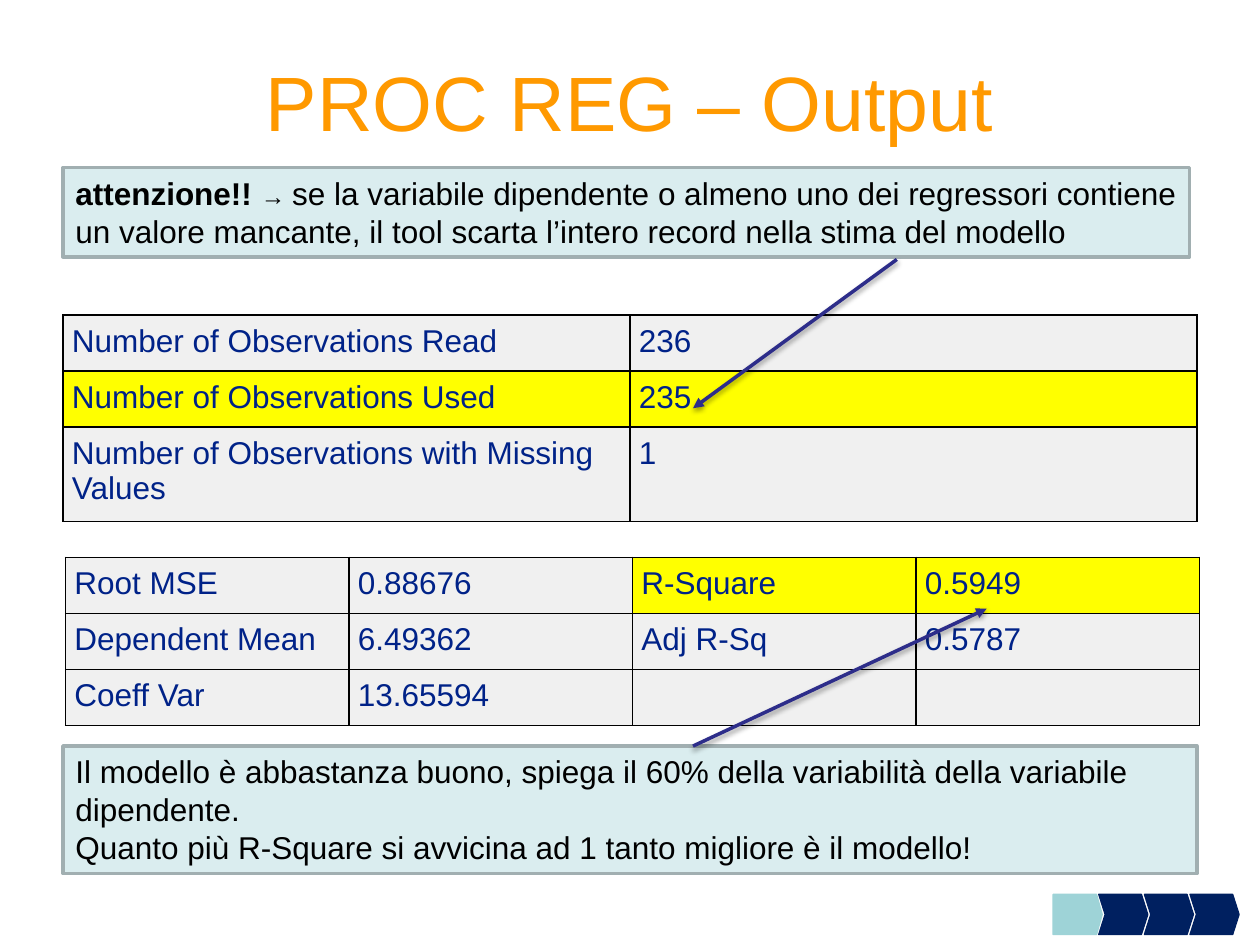
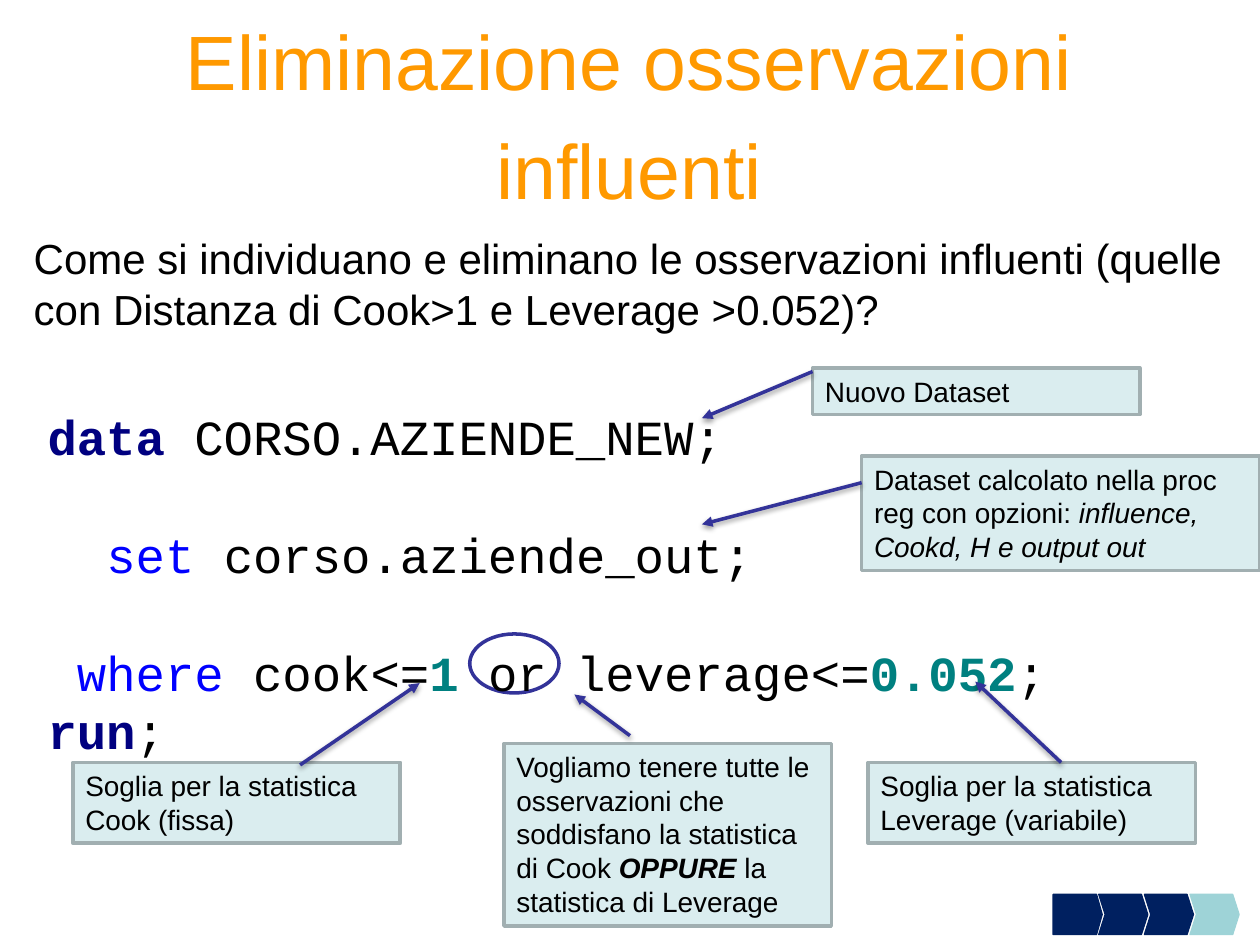
from dataclasses import dataclass

from lxml.etree import SubElement
from pptx import Presentation
from pptx.dml.color import RGBColor
from pptx.enum.shapes import MSO_CONNECTOR, MSO_SHAPE
from pptx.enum.text import MSO_ANCHOR, PP_ALIGN
from pptx.oxml import parse_xml
from pptx.oxml.ns import nsdecls, qn
from pptx.util import Cm, Pt


@dataclass(frozen=True)
class Theme:
    sans: str = "Arial"
    mono: str = "Courier New"
    title_pt: int = 44
    question_pt: int = 24
    note_pt: int = 18
    callout_pt: int = 16
    arrow_sign_pt: int = 14
    code_pt: int = 28
    leading: float = 1.2
    title_color: str = "FF9900"
    ink: str = "000000"
    white: str = "FFFFFF"
    note_fill: str = "DAEDEF"
    note_line: str = "A1AFB1"
    cell_text: str = "002288"
    cell_fill: str = "F0F0F0"
    highlight: str = "FFFF00"
    arrow: str = "2D2D8A"
    arrow_alt: str = "333399"
    step: str = "002060"
    step_active: str = "9ED3D7"
    keyword: str = "000080"
    statement: str = "0000FF"
    number: str = "008080"


@dataclass(frozen=True)
class Box:
    left: float
    top: float
    width: float
    height: float

    def lengths(self):
        return Cm(self.left), Cm(self.top), Cm(self.width), Cm(self.height)


THEME = Theme()


def rgb(color):
    return RGBColor.from_string(color)


# Text helpers
def add_run(paragraph, text, size, color=THEME.ink, font=THEME.sans, bold=False, italic=False):
    run = paragraph.add_run()
    run.text = text
    run.font.size = Pt(size)
    run.font.name = font
    run.font.bold = bold
    run.font.italic = italic
    run.font.color.rgb = rgb(color)


def set_leading(paragraph, size, factor=THEME.leading):
    paragraph.line_spacing = Pt(round(size * factor, 1))


def paint(shape, fill, line, width):
    shape.shadow.inherit = False
    shape.fill.solid()
    shape.fill.fore_color.rgb = rgb(fill)
    shape.line.color.rgb = rgb(line)
    shape.line.width = Pt(width)


# Shared parts
def add_title(slide, box, text, anchor=MSO_ANCHOR.MIDDLE, leading=THEME.leading):
    title = slide.shapes.title
    title.left, title.top, title.width, title.height = box.lengths()
    frame = title.text_frame
    frame.word_wrap = True
    frame.vertical_anchor = anchor
    paragraph = frame.paragraphs[0]
    paragraph.alignment = PP_ALIGN.CENTER
    set_leading(paragraph, THEME.title_pt, leading)
    add_run(paragraph, text, THEME.title_pt, THEME.title_color)


def add_note(slide, box, size, lines):
    """Tinted box; each line is a list of (text, run options)."""
    note = slide.shapes.add_shape(MSO_SHAPE.RECTANGLE, *box.lengths())
    paint(note, THEME.note_fill, THEME.note_line, 2)
    note.text_frame.word_wrap = True
    note.text_frame.vertical_anchor = MSO_ANCHOR.TOP
    paragraph = note.text_frame.paragraphs[0]
    paragraph.alignment = PP_ALIGN.LEFT
    set_leading(paragraph, size)
    for number, line in enumerate(lines):
        if number:
            paragraph.add_line_break()
        for text, options in line:
            add_run(paragraph, text, **{"size": size, **options})


def add_arrow(slide, start, end, color):
    arrow = slide.shapes.add_connector(
        MSO_CONNECTOR.STRAIGHT, *(Cm(value) for value in (*start, *end)))
    arrow.line.color.rgb = rgb(color)
    arrow.line.width = Pt(2)
    properties = arrow._element.spPr
    SubElement(properties.find(qn("a:ln")), qn("a:tailEnd"), type="triangle")
    properties.append(parse_xml(
        f'<a:effectLst {nsdecls("a")}><a:outerShdw blurRad="{Pt(3.1)}" dist="{Pt(1.6)}" '
        'dir="5400000" rotWithShape="0"><a:srgbClr val="000000"><a:alpha val="38000"/>'
        '</a:srgbClr></a:outerShdw></a:effectLst>'))


def add_progress(slide, box, active):
    pitch = 0.92
    for step in range(4):
        kind = MSO_SHAPE.CHEVRON if step else MSO_SHAPE.PENTAGON
        place = Box(box.left + step * pitch, box.top, box.width - 3 * pitch, box.height)
        marker = slide.shapes.add_shape(kind, *place.lengths())
        marker.adjustments[0] = 0.16 if step else 0.14
        color = THEME.step_active if step == active else THEME.step
        paint(marker, color, color, 0.75)


# Output tables
def border_cell(cell):
    properties = cell._tc.get_or_add_tcPr()
    for index, side in enumerate(("lnL", "lnR", "lnT", "lnB")):
        properties.insert(index, parse_xml(
            f'<a:{side} {nsdecls("a")} w="{Pt(0.75)}"><a:solidFill>'
            f'<a:srgbClr val="{THEME.ink}"/></a:solidFill></a:{side}>'))


def add_output_table(slide, box, rows, row_heights, highlighted):
    table = slide.shapes.add_table(len(rows), len(rows[0]), *box.lengths()).table
    table.first_row = table.horz_banding = False
    for column in table.columns:
        column.width = Cm(box.width / len(rows[0]))
    for r, (values, height) in enumerate(zip(rows, row_heights)):
        table.rows[r].height = Cm(height)
        for c, value in enumerate(values):
            cell = table.cell(r, c)
            cell.margin_left = cell.margin_right = Cm(0.18)
            cell.margin_top = cell.margin_bottom = Cm(0.18)
            cell.fill.solid()
            cell.fill.fore_color.rgb = rgb(
                THEME.highlight if (r, c) in highlighted else THEME.cell_fill)
            border_cell(cell)
            if value:
                add_run(cell.text_frame.paragraphs[0], value, THEME.note_pt, THEME.cell_text)


# Question and program code
def add_text_area(slide, box):
    frame = slide.shapes.add_textbox(*box.lengths()).text_frame
    frame.word_wrap = True
    return frame


def add_question(slide, box, text):
    paragraph = add_text_area(slide, box).paragraphs[0]
    set_leading(paragraph, THEME.question_pt)
    add_run(paragraph, text, THEME.question_pt)


def add_code(slide, box, statements):
    """Each statement is (indent in characters, gap above in lines, runs)."""
    frame = add_text_area(slide, box)
    for number, (indent, gap, runs) in enumerate(statements):
        paragraph = frame.add_paragraph() if number else frame.paragraphs[0]
        set_leading(paragraph, THEME.code_pt)
        paragraph.space_before = Pt(gap * THEME.code_pt * THEME.leading)
        properties = paragraph._p.get_or_add_pPr()
        properties.set("marL", str(Pt(indent * THEME.code_pt * 0.6)))
        properties.set("indent", "0")
        for text, color, bold in runs:
            add_run(paragraph, text, THEME.code_pt, color, THEME.mono, bold)


def add_or_ring(slide, box):
    ring = slide.shapes.add_shape(MSO_SHAPE.OVAL, *box.lengths())
    paint(ring, THEME.white, THEME.arrow_alt, 2)


# Slides
def build_output_slide(slide, progress_box):
    add_title(slide, Box(1.27, 0.43, 22.86, 3.18), "PROC REG – Output")
    add_note(slide, Box(1.27, 3.38, 22.71, 1.8), THEME.note_pt, [[
        ("attenzione!! ", {"bold": True}),
        ("→ ", {"size": THEME.arrow_sign_pt}),
        ("se la variabile dipendente o almeno uno dei regressori contiene un valore "
         "mancante, il tool scarta l’intero record nella stima del modello", {}),
    ]])
    add_note(slide, Box(1.27, 15.04, 22.86, 2.57), THEME.note_pt, [
        [("Il modello è abbastanza buono, spiega il 60% della variabilità della "
          "variabile dipendente.", {})],
        [("Quanto più R-Square si avvicina ad 1 tanto migliore è il modello!", {})],
    ])
    add_output_table(slide, Box(1.27, 6.35, 22.86, 4.16), [
        ("Number of Observations Read", "236"),
        ("Number of Observations Used", "235"),
        ("Number of Observations with Missing Values", "1"),
    ], (1.13, 1.13, 1.9), {(1, 0), (1, 1)})
    add_arrow(slide, (18.08, 5.23), (13.97, 8.23), THEME.arrow)
    add_output_table(slide, Box(1.32, 11.23, 22.86, 3.39), [
        ("Root MSE", "0.88676", "R-Square", "0.5949"),
        ("Dependent Mean", "6.49362", "Adj R-Sq", "0.5787"),
        ("Coeff Var", "13.65594", "", ""),
    ], (1.13, 1.13, 1.13), {(0, 2), (0, 3)})
    add_arrow(slide, (13.97, 15.04), (19.89, 12.27), THEME.arrow)
    add_progress(slide, progress_box, active=0)


def build_selection_slide(slide, progress_box):
    add_or_ring(slide, Box(9.47, 12.78, 1.8, 1.19))
    add_code(slide, Box(0.71, 8.08, 20.98, 7.3), [
        (0, 0, [("data", THEME.keyword, True), (" CORSO.AZIENDE_NEW;", THEME.ink, False)]),
        (2, 1, [("set ", THEME.statement, False), ("corso.aziende_out;", THEME.ink, False)]),
        (1, 1, [("where", THEME.statement, False), (" cook<=", THEME.ink, False),
                ("1 ", THEME.number, True), ("or leverage<=", THEME.ink, False),
                ("0.052", THEME.number, True), (";", THEME.ink, False)]),
        (0, 0, [("run", THEME.keyword, True), (";", THEME.ink, False)]),
    ])
    add_title(slide, Box(1.47, -0.2, 22.43, 4.78), "Eliminazione osservazioni influenti",
              MSO_ANCHOR.TOP, leading=1.42)
    add_question(slide, Box(0.43, 4.57, 24.56, 2.5),
                 "Come si individuano e eliminano le osservazioni influenti "
                 "(quelle con Distanza di Cook>1 e Leverage >0.052)?")
    add_progress(slide, progress_box, active=3)

    # Callouts: box, arrow start, arrow end, text
    callouts = [
        (Box(16.38, 7.42, 6.6, 0.94), (16.38, 7.49), (14.15, 8.43), [("Nuovo Dataset", {})]),
        (Box(17.37, 9.19, 8.03, 2.31), (17.37, 9.73), (14.15, 10.57),
         [("Dataset calcolato nella proc reg con opzioni: ", {}),
          ("influence, Cookd, H e output out", {"italic": True})]),
        (Box(1.47, 15.37, 6.6, 1.63), (6.05, 15.42), (8.46, 13.77),
         [("Soglia per la statistica Cook (fissa)", {})]),
        (Box(17.5, 15.37, 6.6, 1.63), (21.39, 15.37), (19.66, 13.74),
         [("Soglia per la statistica Leverage (variabile)", {})]),
        (Box(10.16, 14.99, 6.6, 3.68), (12.7, 14.83), (11.58, 14),
         [("Vogliamo tenere tutte le osservazioni che soddisfano la statistica di Cook ", {}),
          ("OPPURE", {"bold": True, "italic": True}),
          (" la statistica di Leverage", {})]),
    ]
    for box, start, end, runs in callouts:
        add_note(slide, box, THEME.callout_pt, [runs])
        add_arrow(slide, start, end, THEME.arrow_alt)


def main():
    deck = Presentation()
    deck.slide_width, deck.slide_height = Cm(25.4), Cm(19.05)
    title_only = deck.slide_layouts[5]
    progress_box = Box(21.23, 18.03, 3.75, 0.81)
    for build in (build_output_slide, build_selection_slide):
        build(deck.slides.add_slide(title_only), progress_box)
    deck.save("out.pptx")


if __name__ == "__main__":
    main()
